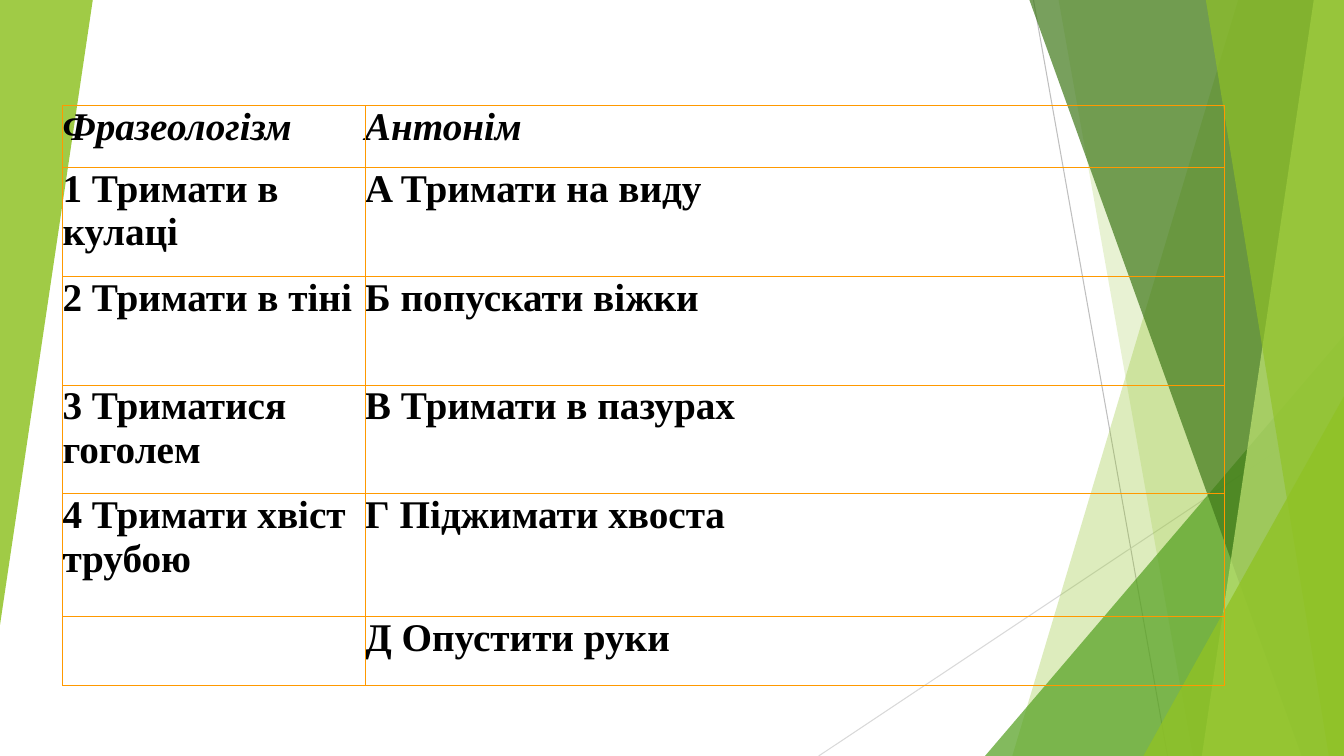
import pptx
import pptx.dml.color
import pptx.enum.shapes
import pptx.oxml
import pptx.oxml.ns
import pptx.util
from dataclasses import dataclass
from pptx.util import Inches


@dataclass(frozen=True)
class Theme:
    font: str = "Times New Roman"
    text_size: int = 28
    text: str = "000000"
    border: str = "FF9900"
    border_width: float = 0.75
    lime: str = "90C226"
    green: str = "54A021"
    dark_green: str = "3F7819"
    pale_green: str = "C0E474"
    gray: str = "BFBFBF"
    light_gray: str = "D9D9D9"


THEME = Theme()
SLIDE_WIDTH, SLIDE_HEIGHT = 13.33, 7.5

ROWS = [
    ("Фразеологізм", "Антонім"),
    ("1 Тримати в кулаці", "A Тримати на виду"),
    ("2 Тримати в тіні", "Б попускати віжки"),
    ("3 Триматися гоголем", "В Тримати в пазурах"),
    ("4 Тримати хвіст трубою", "Г Піджимати хвоста"),
    ("", "Д Опустити руки"),
]
COLUMN_WIDTHS = [3, 8.52]
ROW_HEIGHTS = [0.61, 1.08, 1.08, 1.08, 1.22, 0.68]


def rgb(color):
    return pptx.dml.color.RGBColor.from_string(color)


def paint(shape, color, opacity):
    shape.shadow.inherit = False
    shape.fill.solid()
    shape.fill.fore_color.rgb = rgb(color)
    shape.line.fill.background()
    color_element = shape.fill._xPr.find(".//" + pptx.oxml.ns.qn("a:srgbClr"))
    alpha = color_element.makeelement(pptx.oxml.ns.qn("a:alpha"), {"val": str(opacity * 1000)})
    color_element.append(alpha)


def add_thin_line(slide, start, end, color):
    line = slide.shapes.add_connector(
        pptx.enum.shapes.MSO_CONNECTOR.STRAIGHT, *map(Inches, start + end))
    line.line.color.rgb = rgb(color)
    line.line.width = pptx.util.Pt(0.75)
    properties = line._element.spPr
    properties.append(properties.makeelement(pptx.oxml.ns.qn("a:effectLst"), {}))


def add_panel(slide, box, top_left, bottom_left, color, opacity):
    left, top, width, height = box
    right, bottom = left + width, top + height
    corners = [(left + top_left, top), (right, top), (right, bottom), (left + bottom_left, bottom)]
    points = [(Inches(x), Inches(y)) for x, y in corners]
    builder = slide.shapes.build_freeform(*points[0])
    builder.add_line_segments(points[1:], close=True)
    paint(builder.convert_to_shape(), color, opacity)


def add_triangle(slide, box, color, opacity, rotation=0):
    triangle = slide.shapes.add_shape(
        pptx.enum.shapes.MSO_SHAPE.ISOSCELES_TRIANGLE, *map(Inches, box))
    triangle.adjustments[0] = 1
    triangle.rotation = rotation
    paint(triangle, color, opacity)


def add_right_facets(slide, box):
    left, top, width, height = box
    right, bottom = left + width, top + height
    add_thin_line(slide, (left + 2.13, top), (left + 3.46, bottom), THEME.gray)
    add_thin_line(slide, (right, top + 4.03), (left, bottom), THEME.light_gray)
    add_panel(slide, box, 4.16, 1.92, THEME.lime, 30)
    add_panel(slide, box, 2.38, 3.71, THEME.lime, 20)
    add_triangle(slide, (right - 3.56, bottom - 4.17, 3.56, 4.17), THEME.green, 72)
    add_panel(slide, box, 2.09, 4.79, THEME.dark_green, 70)
    add_panel(slide, box, 4.91, 3.8, THEME.pale_green, 70)
    add_panel(slide, box, 3.84, 5.06, THEME.lime, 65)
    add_triangle(slide, (right - 1.99, bottom - 3.57, 1.99, 3.57), THEME.lime, 80)


def set_borders(cell):
    properties = cell._tc.get_or_add_tcPr()
    width = pptx.util.Pt(THEME.border_width)
    for position, side in enumerate(("lnL", "lnR", "lnT", "lnB")):
        border = pptx.oxml.parse_xml(
            f'<a:{side} {pptx.oxml.ns.nsdecls("a")} w="{width}">'
            f'<a:solidFill><a:srgbClr val="{THEME.border}"/></a:solidFill></a:{side}>')
        properties.insert(position, border)


def format_cell(cell, text, italic):
    cell.margin_left = cell.margin_right = cell.margin_top = cell.margin_bottom = 0
    cell.fill.background()
    set_borders(cell)
    cell.text_frame.text = text
    for run in cell.text_frame.paragraphs[0].runs:
        run.font.name = THEME.font
        run.font.size = pptx.util.Pt(THEME.text_size)
        run.font.color.rgb = rgb(THEME.text)
        run.font.bold = True
        run.font.italic = italic


def add_idiom_table(slide, box):
    frame = slide.shapes.add_table(len(ROWS), len(COLUMN_WIDTHS), *map(Inches, box))
    table = frame.table
    table.first_row = table.horz_banding = False
    for column, width in zip(table.columns, COLUMN_WIDTHS):
        column.width = Inches(width)
    for row_index, (row, height, texts) in enumerate(zip(table.rows, ROW_HEIGHTS, ROWS)):
        row.height = Inches(height)
        for cell, text in zip(row.cells, texts):
            format_cell(cell, text, italic=row_index == 0)


def main():
    presentation = pptx.Presentation()
    presentation.slide_width = Inches(SLIDE_WIDTH)
    presentation.slide_height = Inches(SLIDE_HEIGHT)
    slide = presentation.slides.add_slide(presentation.slide_layouts[6])
    add_right_facets(slide, (8.12, 0, SLIDE_WIDTH - 8.12, SLIDE_HEIGHT))
    add_triangle(slide, (0, 0, 0.92, 6.2), THEME.lime, 85, rotation=180)
    add_idiom_table(slide, (0.62, 1.05, sum(COLUMN_WIDTHS), sum(ROW_HEIGHTS)))
    presentation.save("out.pptx")


if __name__ == "__main__":
    main()
